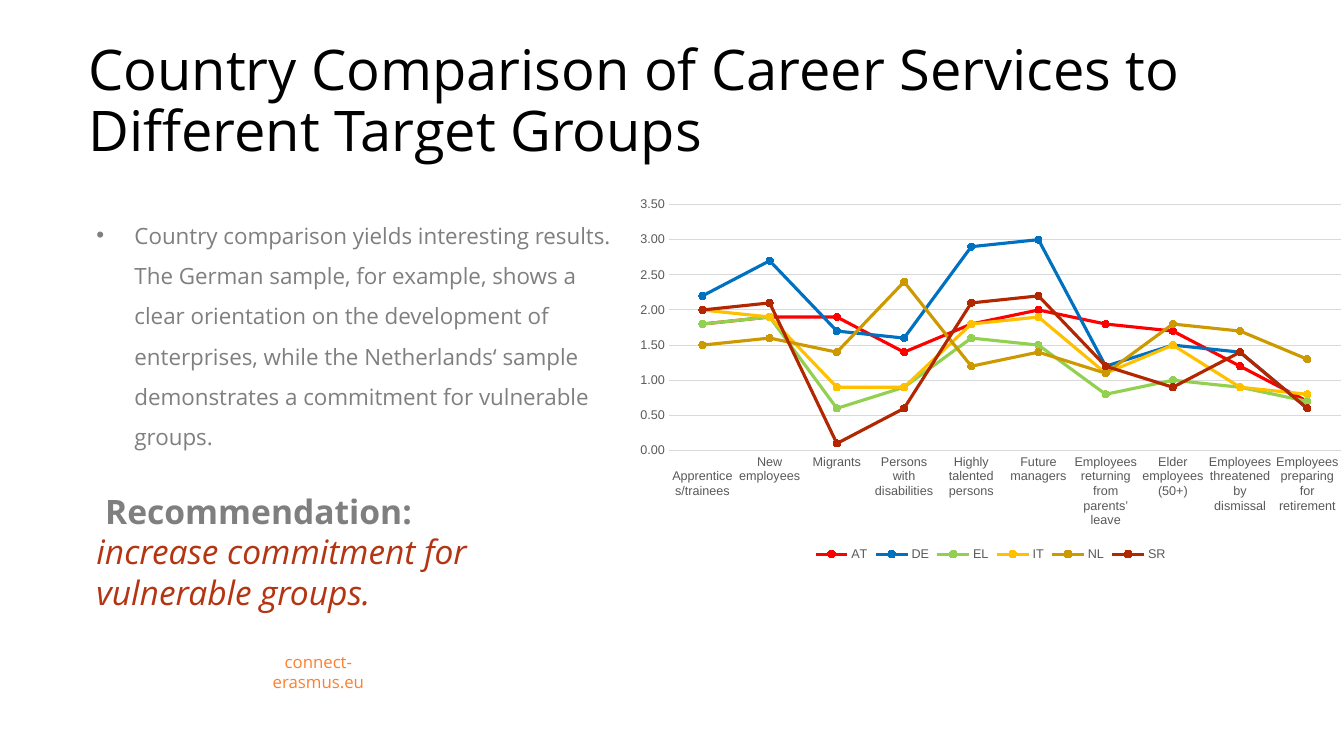
"""Build the slide comparing career services to target groups by country."""
from lxml.etree import SubElement
from pptx import Presentation
from pptx.chart.data import CategoryChartData as ChartData
from pptx.dml.color import RGBColor
from pptx.enum.chart import XL_CHART_TYPE as ChartType
from pptx.enum.chart import XL_LEGEND_POSITION as LegendPosition
from pptx.enum.chart import XL_MARKER_STYLE as Marker
from pptx.enum.chart import XL_TICK_MARK as TickMark
from pptx.enum.text import MSO_ANCHOR as Anchor
from pptx.enum.text import PP_ALIGN as Align
from pptx.oxml.ns import qn
from pptx.util import Cm, Pt

TARGET_GROUPS = [
    " Apprentices/trainees", "New employees", "Migrants",
    "Persons with disabilities", "Highly talented persons", "Future managers",
    "Employees returning from parents’ leave", "Elder employees (50+)",
    "Employees threatened by dismissal", "Employees preparing for retirement",
]
COUNTRIES = {
    "AT": ("FF0000", [1.8, 1.9, 1.9, 1.4, 1.8, 2, 1.8, 1.7, 1.2, 0.7]),
    "DE": ("0070C0", [2.2, 2.7, 1.7, 1.6, 2.9, 3, 1.2, 1.5, 1.4, 0.6]),
    "EL": ("92D050", [1.8, 1.9, 0.6, 0.9, 1.6, 1.5, 0.8, 1, 0.9, 0.7]),
    "IT": ("FFC000", [2, 1.9, 0.9, 0.9, 1.8, 1.9, 1.1, 1.5, 0.9, 0.8]),
    "NL": ("CC9900", [1.5, 1.6, 1.4, 2.4, 1.2, 1.4, 1.1, 1.8, 1.7, 1.3]),
    "SR": ("B22600", [2, 2.1, 0.1, 0.6, 2.1, 2.2, 1.2, 0.9, 1.4, 0.6]),
}


def rgb(code):
    """Turn a hex string into a colour."""
    return RGBColor.from_string(code)


def style_font(font, face, size, color, bold=False, italic=False):
    """Set face, size, colour and emphasis of a font."""
    font.name, font.size = face, Pt(size)
    font.bold, font.italic = bold, italic
    font.color.rgb = rgb(color)


def write(frame, text, face="Open Sans", size=16, color="7F7F7F", bold=False,
          italic=False, align=Align.LEFT, spacing=1.0, before=0, indent=0, bullet=None):
    """Add one formatted paragraph to a text frame."""
    first = frame.paragraphs[0]
    paragraph = frame.add_paragraph() if first.runs else first
    properties = paragraph._p.get_or_add_pPr()
    if indent:
        properties.set("marL", str(Cm(indent)))
    if bullet:
        properties.set("indent", str(-Cm(indent)))
        SubElement(properties, qn("a:buFont"), typeface="Arial")
        SubElement(properties, qn("a:buChar"), char=bullet)
    paragraph.alignment = align
    paragraph.line_spacing = spacing
    paragraph.space_before = Pt(before)
    run = paragraph.add_run()
    run.text = text
    style_font(run.font, face, size, color, bold, italic)


class SlideBuilder:
    """Hold the chart style and the current slide."""

    chart_face = "Arial"
    label_size = 9
    label_color = "595959"
    grid_color = "D9D9D9"

    def __init__(self, slide):
        """Keep the slide to draw on."""
        self.slide = slide

    def text_area(self, left, top, width, height, anchor=Anchor.TOP):
        """Add a wrapping text box and return its frame."""
        frame = self.slide.shapes.add_textbox(
            Cm(left), Cm(top), Cm(width), Cm(height)).text_frame
        frame.word_wrap = True
        frame.vertical_anchor = anchor
        return frame

    def label(self, font):
        """Apply the small chart label style."""
        style_font(font, self.chart_face, self.label_size, self.label_color)

    def grid_line(self, line):
        """Apply the thin grey rule style."""
        line.color.rgb = rgb(self.grid_color)
        line.width = Pt(0.75)

    def line_chart(self, left, top, width, height, categories, series):
        """Add a line chart with round markers and a legend below."""
        data = ChartData(number_format="###0.00")
        data.categories = categories
        for name, (_, values) in series.items():
            data.add_series(name, values)
        chart = self.slide.shapes.add_chart(
            ChartType.LINE_MARKERS, Cm(left), Cm(top), Cm(width), Cm(height), data).chart
        style_font(chart.font, self.chart_face, 10, "000000")
        chart.has_title = False
        chart.has_legend = True
        chart.legend.position = LegendPosition.BOTTOM
        chart.legend.include_in_layout = False
        self.label(chart.legend.font)

        groups, scores = chart.category_axis, chart.value_axis
        for axis in (groups, scores):
            axis.major_tick_mark = axis.minor_tick_mark = TickMark.NONE
            self.label(axis.tick_labels.font)
        self.grid_line(groups.format.line)
        scores.minimum_scale, scores.maximum_scale, scores.major_unit = 0, 3.5, 0.5
        scores.tick_labels.number_format = "###0.00"
        scores.tick_labels.number_format_is_linked = False
        scores.format.line.fill.background()
        self.grid_line(scores.major_gridlines.format.line)

        chart.plots[0].vary_by_categories = False
        for country, (color, _) in zip(chart.plots[0].series, series.values()):
            country.smooth = False
            country.format.line.color.rgb = rgb(color)
            country.format.line.width = Pt(2.25)
            country.marker.style, country.marker.size = Marker.CIRCLE, 5
            country.marker.format.fill.solid()
            country.marker.format.fill.fore_color.rgb = rgb(color)
            country.marker.format.line.color.rgb = rgb(color)


def main():
    """Compose the slide and save it."""
    deck = Presentation()
    deck.slide_width, deck.slide_height = Cm(33.87), Cm(19.05)
    builder = SlideBuilder(deck.slides.add_slide(deck.slide_layouts[6]))

    title = builder.text_area(1.98, 0.18, 29.69, 4.06, Anchor.BOTTOM)
    write(title, "Country Comparison of Career Services to Different Target Groups",
          size=40, color="000000", spacing=0.9)

    findings = builder.text_area(2.18, 5.13, 13.92, 11.3)
    write(findings, "Country comparison yields interesting results. The German sample, "
          "for example, shows a clear orientation on the development of enterprises, "
          "while the Netherlands‘ sample demonstrates a commitment for vulnerable groups.",
          spacing=1.5, indent=0.96, bullet="•")
    write(findings, "Recommendation:", size=24, bold=True, before=29, indent=0.22)
    write(findings, "increase commitment for vulnerable groups.", size=24,
          color="B43512", italic=True)

    website = builder.text_area(5.79, 16.54, 4.47, 0.76, Anchor.MIDDLE)
    write(website, "connect-erasmus.eu", size=12, color="FF7F2A", align=Align.CENTER)

    builder.line_chart(15.77, 4.78, 18.39, 9.47, TARGET_GROUPS, COUNTRIES)
    deck.save("out.pptx")


if __name__ == "__main__":
    main()
